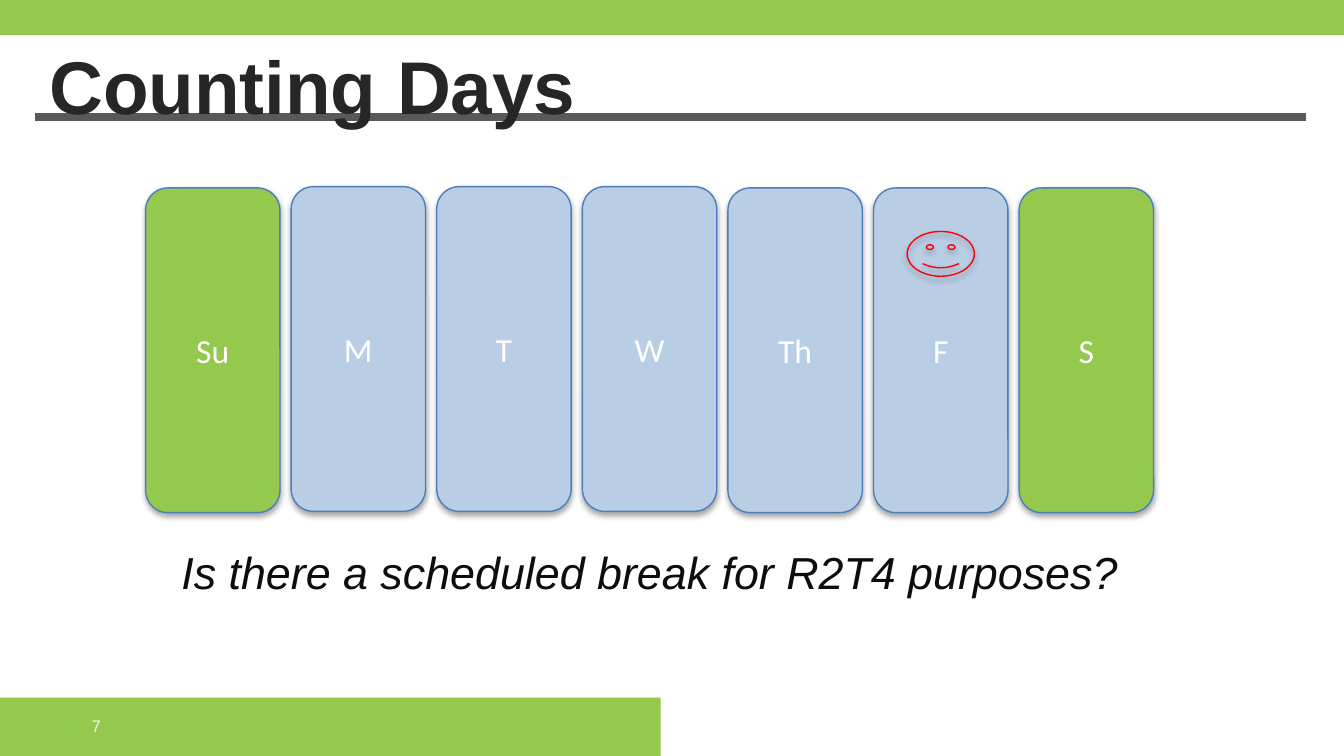
import pptx
import pptx.dml.color
import pptx.enum.shapes
import pptx.enum.text
import pptx.oxml
import pptx.util

Pt = pptx.util.Pt
Shape = pptx.enum.shapes.MSO_SHAPE
Anchor = pptx.enum.text.MSO_ANCHOR
Align = pptx.enum.text.PP_ALIGN

GREEN = "95C94E"
BLUE = "B9CDE5"
OUTLINE = "4B7EBC"


def color(hex_code):
    return pptx.dml.color.RGBColor.from_string(hex_code)


class SlideBuilder:
    heading_font = "Arial"
    day_font = "Calibri"

    def __init__(self, slide):
        self.slide = slide

    def set_text(self, frame, text, size, font, hex_code, align=Align.LEFT,
                 anchor=Anchor.TOP, bold=False, italic=False):
        frame.word_wrap = True
        frame.vertical_anchor = anchor
        frame.text = text
        paragraph = frame.paragraphs[0]
        paragraph.alignment = align
        style = paragraph.runs[0].font
        style.name, style.size = font, Pt(size)
        style.bold, style.italic = bold, italic
        style.color.rgb = color(hex_code)

    def shape(self, kind, left, top, width, height, fill=None, line=None):
        item = self.slide.shapes.add_shape(
            kind, Pt(left), Pt(top), Pt(width), Pt(height))
        if fill:
            item.fill.solid()
            item.fill.fore_color.rgb = color(fill)
        else:
            item.fill.background()
        if line:
            item.line.color.rgb = color(line)
            item.line.width = Pt(0.75)
        else:
            item.line.fill.background()
        return item

    def band(self, left, top, width, height):
        self.shape(Shape.RECTANGLE, left, top, width, height, GREEN).shadow.inherit = False

    def rule(self, left, right, y, hex_code, weight):
        line = self.slide.shapes.add_connector(
            pptx.enum.shapes.MSO_CONNECTOR.STRAIGHT, Pt(left), Pt(y), Pt(right), Pt(y))
        line.line.color.rgb = color(hex_code)
        line.line.width = Pt(weight)
        properties = line._element.spPr
        properties.append(properties.makeelement(pptx.oxml.ns.qn("a:effectLst"), {}))

    def day(self, name, left, top, fill):
        card = self.shape(Shape.ROUNDED_RECTANGLE, left, top, 72, 174, fill, OUTLINE)
        self.set_text(card.text_frame, name, 18, self.day_font, "FFFFFF",
                      Align.CENTER, Anchor.MIDDLE)

    def text(self, text, left, top, width, height, size, hex_code,
             inset_left=7.2, inset_top=3.6, **style):
        frame = self.slide.shapes.add_textbox(
            Pt(left), Pt(top), Pt(width), Pt(height)).text_frame
        frame.margin_left, frame.margin_top = Pt(inset_left), Pt(inset_top)
        self.set_text(frame, text, size, self.heading_font, hex_code, **style)


def main():
    deck = pptx.Presentation()
    deck.slide_width, deck.slide_height = Pt(720), Pt(405)
    builder = SlideBuilder(deck.slides.add_slide(deck.slide_layouts[6]))

    builder.band(0, 373.7, 354, 31.5)
    builder.band(-1.2, 0, 722.4, 18.9)
    builder.rule(18.7, 699.7, 62.6, "595959", 4)
    builder.text("Counting Days", 21, 14.4, 672, 38, 40, "262626",
                 inset_left=5.4, inset_top=7.2, bold=True)

    weekend = ("Su", "S")
    raised = ("M", "T", "W")
    for index, name in enumerate(("Su", "M", "T", "W", "Th", "F", "S")):
        builder.day(name, 78 * (index + 1), 100 if name in raised else 100.7,
                    GREEN if name in weekend else BLUE)
    builder.shape(Shape.SMILEY_FACE, 486, 124, 36, 24, line="FF0000")

    builder.text("Is there a scheduled break for R2T4 purposes?", 42, 286.6, 612, 60.5,
                 24, "0D0D0D", inset_top=5, align=Align.CENTER, italic=True)
    builder.text("7", 42, 378, 168, 21.6, 9, "F2F2F2", anchor=Anchor.MIDDLE)

    deck.save("out.pptx")


if __name__ == "__main__":
    main()
